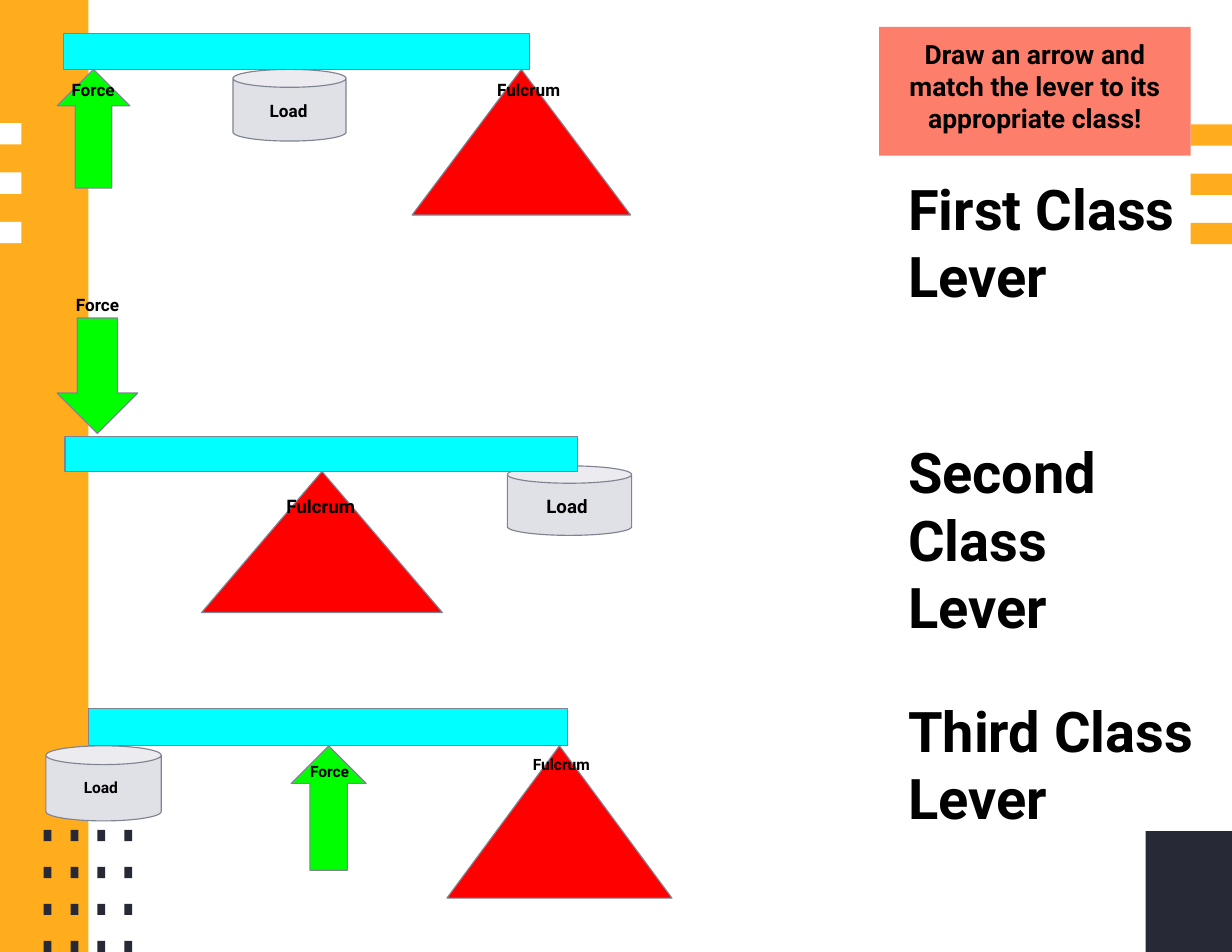
from pptx import Presentation
from pptx.dml.color import RGBColor
from pptx.enum.shapes import MSO_SHAPE
from pptx.enum.text import MSO_ANCHOR, PP_ALIGN
from pptx.util import Inches, Pt

RECTANGLE = MSO_SHAPE.RECTANGLE
CAN = MSO_SHAPE.CAN
TRIANGLE = MSO_SHAPE.ISOSCELES_TRIANGLE
UP_ARROW = MSO_SHAPE.UP_ARROW
DOWN_ARROW = MSO_SHAPE.DOWN_ARROW
TOP = MSO_ANCHOR.TOP
LEFT = PP_ALIGN.LEFT
CENTER = PP_ALIGN.CENTER

ORANGE = RGBColor(0xFF, 0xAD, 0x1D)
WHITE = RGBColor(0xFF, 0xFF, 0xFF)
NAVY = RGBColor(0x27, 0x2A, 0x36)
SILVER = RGBColor(0xE0, 0xE0, 0xE7)
RED = RGBColor(0xFF, 0x00, 0x00)
CYAN = RGBColor(0x00, 0xFF, 0xFF)
GREEN = RGBColor(0x00, 0xFF, 0x00)
SALMON = RGBColor(0xFD, 0x7E, 0x6B)
GRAY = RGBColor(0x80, 0x83, 0x92)
BLACK = RGBColor(0x00, 0x00, 0x00)

FONT = "Roboto"
WIDTH, HEIGHT = 11, 8.5
INSET = 0.1
STRIPE_STEP = 0.44
DOT_COLUMN, DOT_ROW = 0.24, 0.33
CLASS_LEFT, CLASS_WIDTH = 8.01, 2.78

LEVERS = [
    {
        "load": (2.08, 0.62, 1.01, 0.64),
        "fulcrum": (3.68, 0.62, 1.95, 1.3),
        "bar": (0.57, 0.3, 4.16, 0.32),
        "force": (UP_ARROW, (0.51, 0.62, 0.65, 1.06)),
        "labels": [
            ("Force", (0.54, 0.62, 0.85, 0.27), 11),
            ("Load", (2.31, 0.8, 0.54, 0.32), 11),
            ("Fulcrum", (4.34, 0.62, 0.91, 0.21), 11),
        ],
    },
    {
        "load": (4.53, 4.16, 1.11, 0.62),
        "fulcrum": (1.8, 4.21, 2.15, 1.26),
        "bar": (0.58, 3.9, 4.58, 0.31),
        "force": (DOWN_ARROW, (0.51, 2.84, 0.72, 1.03)),
        "labels": [
            ("Force", (0.58, 2.54, 0.93, 0.26), 11),
            ("Load", (4.78, 4.32, 0.72, 0.31), 12),
            ("Fulcrum", (2.46, 4.32, 1.1, 0.31), 12),
        ],
    },
    {
        "load": (0.41, 6.66, 1.03, 0.67),
        "fulcrum": (3.99, 6.66, 2.01, 1.36),
        "bar": (0.79, 6.33, 4.28, 0.33),
        "force": (UP_ARROW, (2.6, 6.66, 0.67, 1.11)),
        "labels": [
            ("Force", (2.67, 6.72, 0.56, 0.28), 10),
            ("Load", (0.65, 6.86, 0.56, 0.33), 10),
            ("Fulcrum", (4.66, 6.66, 0.93, 0.22), 10),
        ],
    },
]

CLASS_NAMES = [
    ("First Class Lever", 1.46),
    ("Second Class Lever", 3.81),
    ("Third Class Lever", 6.12),
]


def add_figure(page, kind, place, color, outline=None):
    figure = page.shapes.add_shape(kind, *[Inches(length) for length in place])
    figure.shadow.inherit = False
    figure.fill.solid()
    figure.fill.fore_color.rgb = color
    if outline is None:
        figure.line.fill.background()
    else:
        figure.line.color.rgb = outline
        figure.line.width = Pt(0.75)
    return figure


def write_text(box, text, size, align=LEFT, right_inset=INSET):
    frame = box.text_frame
    frame.word_wrap = True
    frame.vertical_anchor = TOP
    frame.margin_left = frame.margin_top = frame.margin_bottom = Inches(INSET)
    frame.margin_right = Inches(right_inset)
    frame.text = text
    para = frame.paragraphs[0]
    para.alignment = align
    font = para.runs[0].font
    font.name = FONT
    font.size = Pt(size)
    font.bold = True
    font.color.rgb = BLACK


def add_label(page, text, place, size, right_inset=INSET):
    box = page.shapes.add_textbox(*[Inches(length) for length in place])
    write_text(box, text, size, right_inset=right_inset)


def add_stripes(page, left, top, width, color):
    for row in range(3):
        add_figure(page, RECTANGLE, (left, top + row * STRIPE_STEP, width, 0.19), color)


def add_dots(page):
    for row in range(4):
        for column in range(4):
            place = (0.39 + column * DOT_COLUMN, 7.41 + row * DOT_ROW, 0.07, 0.1)
            add_figure(page, RECTANGLE, place, NAVY)


def add_backdrop(page):
    add_figure(page, RECTANGLE, (10.23, 7.42, WIDTH - 10.23, HEIGHT - 7.42), NAVY)
    add_figure(page, RECTANGLE, (0, 0, 0.79, HEIGHT), ORANGE)
    add_stripes(page, 0, 1.1, 0.19, WHITE)
    add_dots(page)
    add_stripes(page, 10.63, 1.11, WIDTH - 10.63, ORANGE)


def add_lever(page, lever):
    add_figure(page, CAN, lever["load"], SILVER, GRAY)
    add_figure(page, TRIANGLE, lever["fulcrum"], RED, GRAY)
    add_figure(page, RECTANGLE, lever["bar"], CYAN, GRAY)
    arrow, place = lever["force"]
    add_figure(page, arrow, place, GREEN, GRAY)
    for text, place, size in lever["labels"]:
        add_label(page, text, place, size, right_inset=0)


def add_instruction(page):
    box = add_figure(page, RECTANGLE, (7.85, 0.24, 2.78, 1.15), SALMON)
    write_text(box, "Draw an arrow and match the lever to its appropriate class!", 17, CENTER)


def main():
    deck = Presentation()
    deck.slide_width = Inches(WIDTH)
    deck.slide_height = Inches(HEIGHT)
    page = deck.slides.add_slide(deck.slide_layouts[6])
    add_backdrop(page)
    for lever in LEVERS:
        add_lever(page, lever)
    for name, top in CLASS_NAMES:
        add_label(page, name, (CLASS_LEFT, top, CLASS_WIDTH, 1.34), 36)
    add_instruction(page)
    deck.save("out.pptx")


if __name__ == "__main__":
    main()
